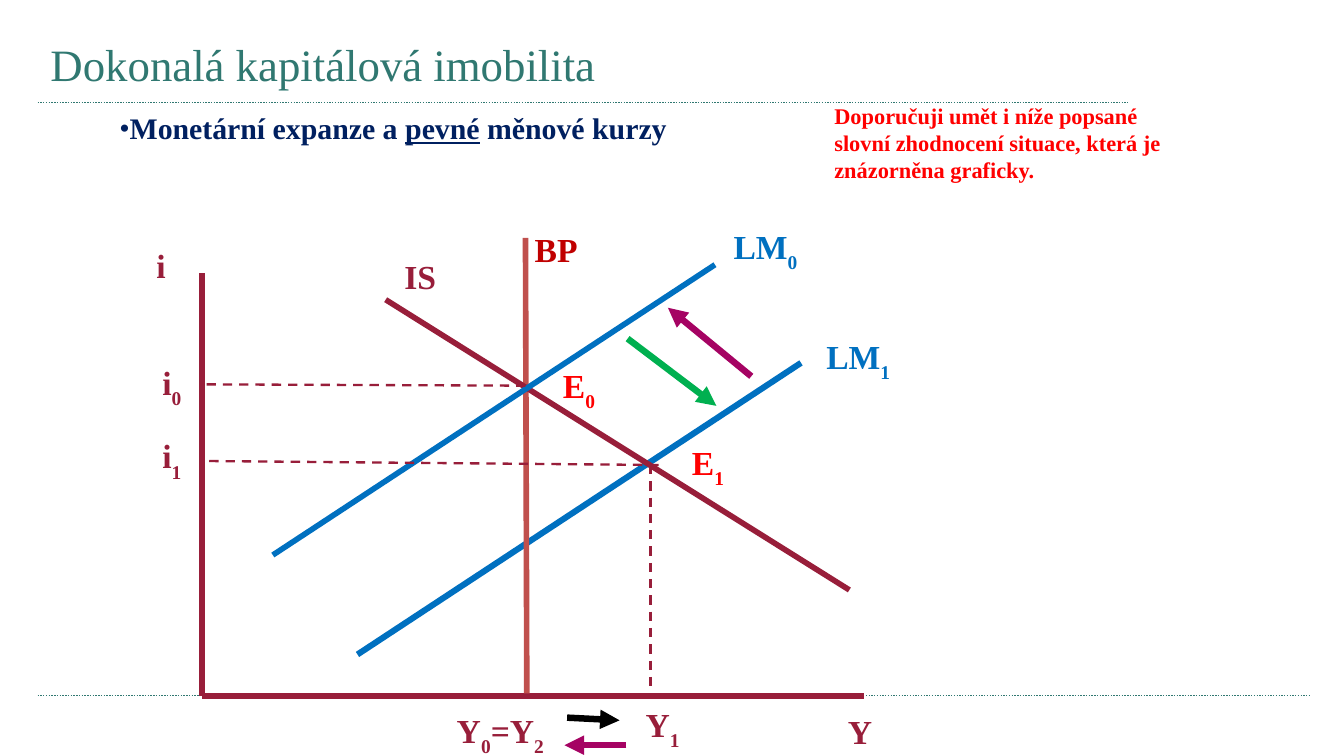
from pptx import Presentation
from pptx.dml.color import RGBColor
from pptx.enum.dml import MSO_LINE
from pptx.enum.shapes import MSO_CONNECTOR
from pptx.enum.text import MSO_ANCHOR, PP_ALIGN
from pptx.oxml.ns import qn
from pptx.util import Inches, Pt
from lxml import etree

STRAIGHT = MSO_CONNECTOR.STRAIGHT
DASH, DOT = MSO_LINE.DASH, MSO_LINE.ROUND_DOT
LEFT, JUSTIFY = PP_ALIGN.LEFT, PP_ALIGN.JUSTIFY
TOP, MIDDLE = MSO_ANCHOR.TOP, MSO_ANCHOR.MIDDLE
FONT = "Times New Roman"
TEAL, NAVY, RED, DARK_RED = "307871", "002060", "FF0000", "C00000"
WINE, BLUE, BRICK = "981E3A", "0070C0", "C0504D"
GREEN, PURPLE, BLACK = "00B050", "A50363", "000000"

# A 16:9 slide
presentation = Presentation()
presentation.slide_width = Inches(10)
presentation.slide_height = presentation.slide_width * 9 // 16
slide = presentation.slides.add_slide(presentation.slide_layouts[5])

# Square grid: 100 columns across the slide, rows of the same size
UNIT = presentation.slide_width / 100


def write_text(text, place, shape=None, size=18, color=WINE, bold=True,
               align=JUSTIFY, anchor=TOP, mark="subscript", bullet=False):
    """Write text at a grid place; parts between bars get the mark."""
    left, top, width, height = [round(n * UNIT) for n in place]
    if shape is None:
        shape = slide.shapes.add_textbox(left, top, width, height)
    shape.left, shape.top, shape.width, shape.height = left, top, width, height
    frame = shape.text_frame
    frame.word_wrap = True
    frame.vertical_anchor = anchor
    paragraph = frame.paragraphs[0]
    paragraph.alignment = align
    if bullet:
        properties = paragraph._p.get_or_add_pPr()
        properties.set("marL", str(round(3.8 * UNIT)))
        properties.set("indent", str(round(4.1 * UNIT)))
        etree.SubElement(properties, qn("a:buFont")).set("typeface", FONT)
        etree.SubElement(properties, qn("a:buChar")).set("char", "•")
    for index, part in enumerate(text.split("|")):
        if not part:
            continue
        run = paragraph.add_run()
        run.text = part
        run.font.name, run.font.size, run.font.bold = FONT, Pt(size), bold
        run.font.color.rgb = RGBColor.from_string(color)
        if index % 2 and mark == "underline":
            run.font.underline = True
        elif index % 2:
            run.font._element.set("baseline", "-30000")


def draw_line(start, end, color=WINE, width=3, dash=None, arrow=False):
    """Draw a straight line between two grid points."""
    points = [round(n * UNIT) for n in (*start, *end)]
    line = slide.shapes.add_connector(STRAIGHT, *points)
    line.line.color.rgb = RGBColor.from_string(color)
    line.line.width = Pt(width)
    if dash:
        line.line.dash_style = dash
    if arrow:
        tail = etree.SubElement(line.line._get_or_add_ln(), qn("a:tailEnd"))
        tail.set("type", "triangle")
    etree.SubElement(line._element.spPr, qn("a:effectLst"))


# Dotted rules under the title and above the footer
draw_line((2.8, 7.65), (83.9, 7.65), TEAL, 0.75, DOT)
draw_line((2.8, 51.75), (97.5, 51.75), TEAL, 0.75, DOT)

# Title, heading and advice
write_text("Dokonalá kapitálová imobilita", (2.75, 1.9, 82.7, 5.6),
           shape=slide.shapes.title, size=24, color=TEAL, bold=False,
           align=LEFT, anchor=MIDDLE)
write_text("Monetární expanze a |pevné| měnové kurzy", (0, 7.7, 87.3, 18.1),
           size=16, color=NAVY, mark="underline", bullet=True)
write_text("Doporučuji umět i níže popsané slovní zhodnocení situace, "
           "která je znázorněna graficky.", (61.1, 7.1, 28.7, 7.1),
           size=12, color=RED, align=LEFT)

# Axes
origin = (15.05, 51.8)
draw_line(origin, (15.05, 20.3))
draw_line(origin, (64.3, 51.8))

# Curves: LM1, BP, IS, LM0
draw_line((26.6, 48.7), (59.6, 27), BLUE, 3.25)
draw_line((39.2, 51.6), (39.1, 17.7), BRICK)
draw_line((63.2, 43.9), (28.7, 22.3))
draw_line((20.3, 41.3), (53.2, 19.7), BLUE)

# Shifts of LM and of output
for start, end, color in [
    ((46.7, 25.2), (53.3, 30.2), GREEN),
    ((55.9, 28), (49.7, 22.9), PURPLE),
    ((42.2, 53.4), (46.1, 53.6), BLACK),
    ((46.6, 55.45), (42, 55.45), PURPLE),
]:
    draw_line(start, end, color, 3.5, arrow=True)

# Dashed guides from the equilibria to the axes
for start, end in [
    ((39.1, 28.7), (15, 28.6)),
    ((48.4, 34.6), (48.4, 51.8)),
    ((49, 34.6), (15, 34.3)),
]:
    draw_line(start, end, width=1.25, dash=DASH)

# Labels: text, left, top, width, colour
for text, left, top, width, color in [
    ("i", 10.65, 17.75, 7, WINE),
    ("Y", 62.1, 52.4, 6.2, WINE),
    ("IS", 29.1, 18.55, 9.9, WINE),
    ("BP", 38.8, 16.55, 8.1, DARK_RED),
    ("LM|0|", 53.6, 16.3, 10.6, BLUE),
    ("LM|1|", 60.5, 24.5, 10.8, BLUE),
    ("E|0|", 40.9, 26.65, 7, RED),
    ("E|1|", 50.5, 32.4, 7.7, RED),
    ("i|0|", 11.1, 26.4, 4.3, WINE),
    ("i|1|", 11.1, 31.9, 6.4, WINE),
    ("Y|0|=Y|2|", 33, 52.35, 10.9, WINE),
    ("Y|1|", 47.05, 51.9, 8.8, WINE),
]:
    write_text(text, (left, top, width, 5.9), color=color)

presentation.save("out.pptx")
